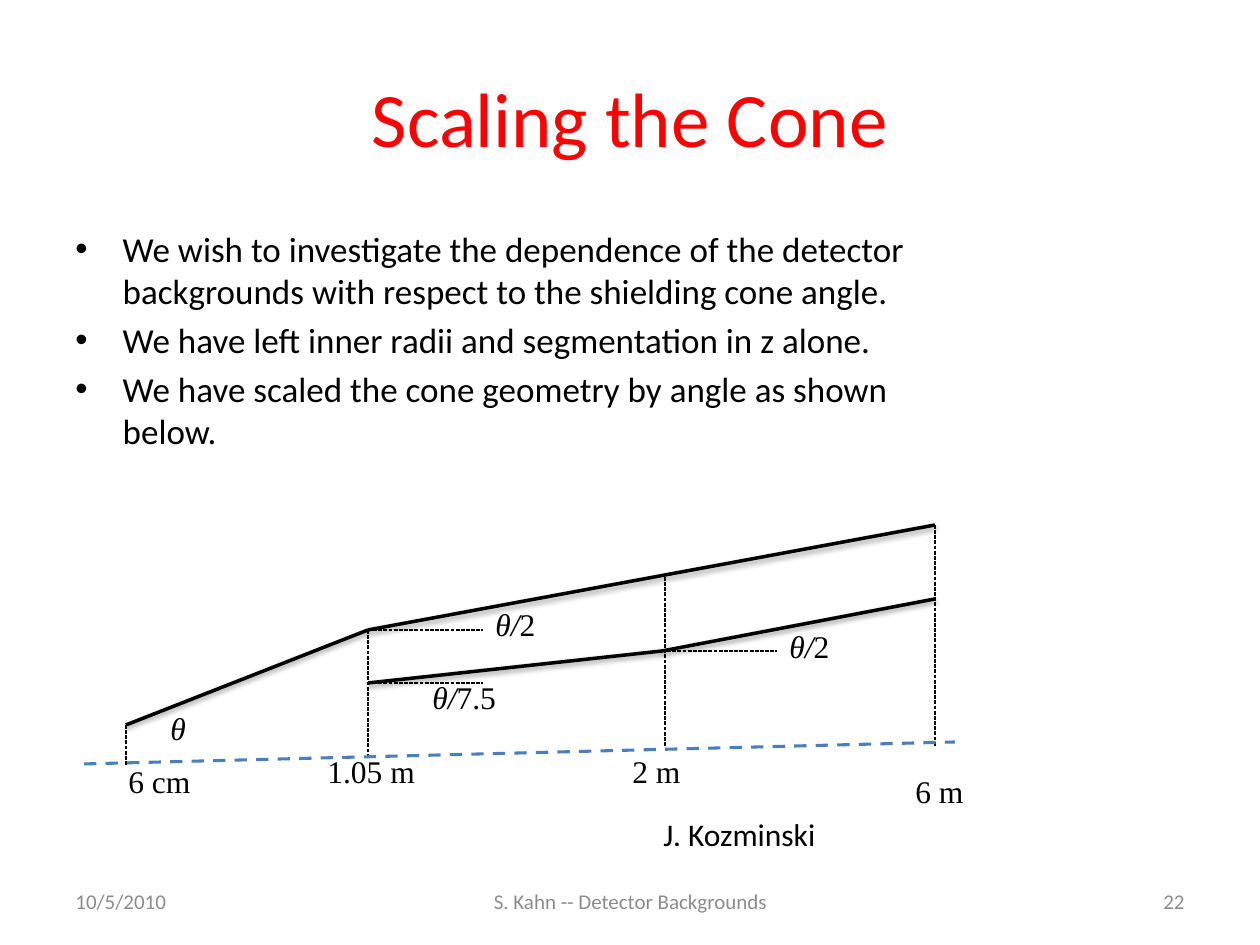
from lxml import etree
from pptx import Presentation, util as u
from pptx.dml.color import RGBColor
from pptx.enum import dml, shapes, text
from pptx.oxml import parse_xml
from pptx.oxml.ns import nsdecls, qn

PX = 914400 // 126
BLACK = RGBColor(0, 0, 0)
RED = RGBColor(0xFF, 0, 0)
BLUE = RGBColor(0x4B, 0x7E, 0xBC)
GRAY = RGBColor(0x8C, 0x8C, 0x8C)
SERIF, SANS = "Times New Roman", "Calibri"
LEFT, CENTER, RIGHT = text.PP_ALIGN.LEFT, text.PP_ALIGN.CENTER, text.PP_ALIGN.RIGHT
DASH, SYS_DASH = dml.MSO_LINE.DASH, dml.MSO_LINE.SQUARE_DOT
SHADOW = (
    f'<a:effectLst {nsdecls("a")}><a:outerShdw blurRad="39370" dist="20320" dir="5400000"'
    ' rotWithShape="0"><a:srgbClr val="000000"><a:alpha val="38000"/></a:srgbClr>'
    '</a:outerShdw></a:effectLst>'
)

prs = Presentation()
prs.slide_width, prs.slide_height = 1260 * PX, 945 * PX
s = prs.slides.add_slide(prs.slide_layouts[5])


def add_text(box, runs, size, font, color, align=LEFT, wrap=True):
    sp = s.shapes.add_textbox(*[v * PX for v in box])
    tf = sp.text_frame
    tf.word_wrap = wrap
    p = tf.paragraphs[0]
    p.alignment = align
    for words, italic in runs:
        r = p.add_run()
        r.text = words
        r.font.size, r.font.name, r.font.italic = u.Pt(size), font, italic
        r.font.color.rgb = color
    return tf


def add_line(points, color, width, dash=None, shadow=False):
    line = s.shapes.add_connector(shapes.MSO_CONNECTOR.STRAIGHT, *[v * PX for v in points])
    line.line.color.rgb = color
    line.line.width = u.Pt(width)
    if dash:
        line.line.dash_style = dash
    spPr = line._element.spPr
    if shadow:
        spPr.append(parse_xml(SHADOW))
    else:
        etree.SubElement(spPr, qn("a:effectLst"))


title = s.shapes.title
title.left, title.top, title.width, title.height = [v * PX for v in (63, 38, 1134, 157)]
title.text_frame.text = "Scaling the Cone"
p = title.text_frame.paragraphs[0]
p.alignment = CENTER
font = p.runs[0].font
font.size, font.name, font.color.rgb = u.Pt(44), SANS, RED

bullets = [
    "We wish to investigate the dependence of the detector backgrounds "
    "with respect to the shielding cone angle.",
    "We have left inner radii and segmentation in z alone.",
    "We have scaled the cone geometry by angle as shown below.",
]
sp = s.shapes.add_textbox(63 * PX, 221 * PX, 914 * PX, 252 * PX)
tf = sp.text_frame
tf.word_wrap = True
tf.text = "\n".join(bullets)
for p in tf.paragraphs:
    p.space_before = u.Pt(4)
    font = p.runs[0].font
    font.size, font.name, font.color.rgb = u.Pt(20), SANS, BLACK
    pPr = p._p.get_or_add_pPr()
    pPr.set("marL", "342900")
    pPr.set("indent", "-342900")
    etree.SubElement(pPr, qn("a:buFont")).set("typeface", "Arial")
    etree.SubElement(pPr, qn("a:buChar")).set("char", "•")

cone_edges = [
    (126, 725, 368, 630),
    (368, 630, 935, 525),
    (368, 683, 662, 651),
    (662, 651, 935, 599),
]
for points in cone_edges:
    add_line(points, BLACK, 2, shadow=True)

guides = [
    (126, 725, 126, 766),
    (368, 630, 368, 756),
    (665, 577, 665, 746),
    (935, 525, 935, 746),
    (368, 630, 483, 630),
    (368, 683, 483, 683),
    (662, 651, 777, 651),
]
for points in guides:
    add_line(points, BLACK, 0.75, SYS_DASH)
add_line((84, 764, 955, 742), BLUE, 1.75, DASH)

labels = [
    (158, 703, 42, "θ", ""),
    (483, 599, 66, "θ/", "2"),
    (777, 621, 66, "θ/", "2"),
    (420, 672, 89, "θ/", "7.5"),
    (116, 756, 88, "", "6 cm"),
    (315, 746, 113, "", "1.05 m"),
    (620, 746, 74, "", "2 m"),
    (903, 766, 74, "", "6 m"),
]
for x, y, w, slanted, upright in labels:
    runs = [run for run in ((slanted, True), (upright, False)) if run[0]]
    add_text((x, y, w, 50), runs, 18, SERIF, BLACK, wrap=False)

add_text((651, 809, 252, 50), [("J. Kozminski", False)], 18, SANS, BLACK)

footers = [
    (63, 294, "10/5/2010", LEFT),
    (431, 399, "S. Kahn -- Detector Backgrounds", CENTER),
    (903, 294, "22", RIGHT),
]
for x, w, words, align in footers:
    tf = add_text((x, 876, w, 50), [(words, False)], 12, SANS, GRAY, align)
    tf.vertical_anchor = text.MSO_ANCHOR.MIDDLE

prs.save("out.pptx")
